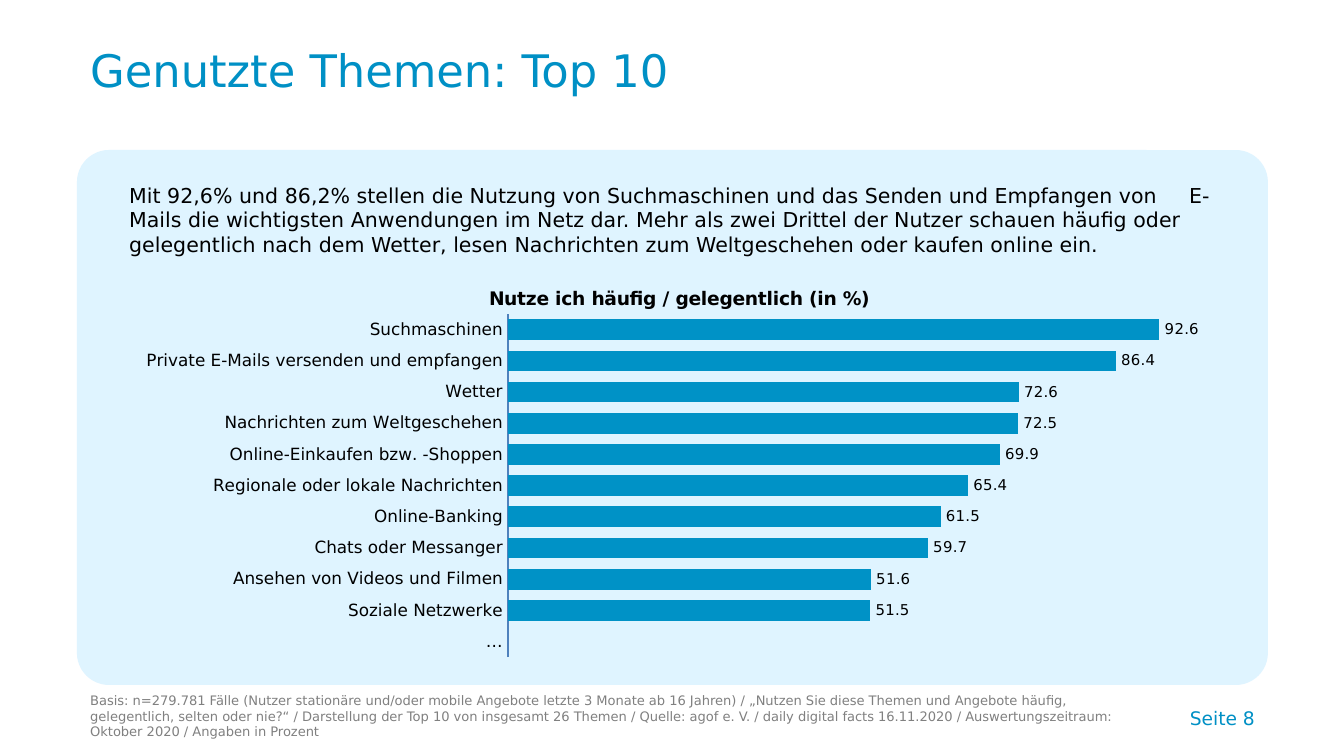
import pptx
import pptx.chart.data
import pptx.dml.color
import pptx.enum.chart
import pptx.enum.shapes
import pptx.enum.text
import pptx.oxml
import pptx.oxml.ns
import pptx.util

RGBColor = pptx.dml.color.RGBColor
Align = pptx.enum.text.PP_ALIGN
Anchor = pptx.enum.text.MSO_ANCHOR

TITLE = "Genutzte Themen: Top 10"
INTRO = (
    "Mit 92,6% und 86,2% stellen die Nutzung von Suchmaschinen und das Senden und "
    "Empfangen von\tE-Mails die wichtigsten Anwendungen im Netz dar. Mehr als zwei "
    "Drittel der Nutzer schauen häufig oder gelegentlich nach dem Wetter, lesen "
    "Nachrichten zum Weltgeschehen oder kaufen online ein."
)
SOURCE_NOTE = (
    "Basis: n=279.781 Fälle (Nutzer stationäre und/oder mobile Angebote letzte 3 Monate "
    "ab 16 Jahren) / „Nutzen Sie diese Themen und Angebote häufig, gelegentlich, selten "
    "oder nie?“ / Darstellung der Top 10 von insgesamt 26 Themen / Quelle: agof e. V. / "
    "daily digital facts 16.11.2020 / Auswertungszeitraum: Oktober 2020 / Angaben in Prozent"
)
PAGE_LABEL = "Seite 8"
CHART_TITLE = "Nutze ich häufig / gelegentlich (in %)"
TOPICS = [
    ("Suchmaschinen", 92.6),
    ("Private E-Mails versenden und empfangen", 86.4),
    ("Wetter", 72.6),
    ("Nachrichten zum Weltgeschehen", 72.5),
    ("Online-Einkaufen bzw. -Shoppen", 69.9),
    ("Regionale oder lokale Nachrichten", 65.4),
    ("Online-Banking", 61.5),
    ("Chats oder Messanger", 59.7),
    ("Ansehen von Videos und Filmen", 51.6),
    ("Soziale Netzwerke", 51.5),
    ("…", None),
]

FONT = "DejaVu Sans"
BLUE = RGBColor(0x00, 0x90, 0xC5)
BAR_BLUE = RGBColor(0x00, 0x92, 0xC6)
AXIS_BLUE = RGBColor(0x4F, 0x81, 0xBD)
PALE_BLUE = RGBColor(0xDF, 0xF4, 0xFF)
GREY = RGBColor(0x80, 0x80, 0x80)
BLACK = RGBColor(0x00, 0x00, 0x00)

PX_PER_INCH = 134.4
TITLE_LAYOUT = {"x": 0.33, "y": 0.05}
PLOT_LAYOUT = {"x": 0.35, "y": 0.13, "w": 0.63, "h": 0.87}


def px(length):
    return pptx.util.Inches(length / PX_PER_INCH)


def place(left, top, width, height):
    return px(left), px(top), px(width), px(height)


def style_font(font, size, color, bold=False):
    font.name = FONT
    font.size = pptx.util.Pt(size)
    font.bold = bold
    font.color.rgb = color


def add_text(slide, text, at, size, color, align=Align.LEFT, anchor=Anchor.TOP,
             line_spacing=None, tab_stop=None):
    box = slide.shapes.add_textbox(*place(*at))
    frame = box.text_frame
    frame.word_wrap = True
    frame.vertical_anchor = anchor
    para = frame.paragraphs[0]
    para.alignment = align
    if line_spacing:
        para.line_spacing = line_spacing
    if tab_stop:
        tabs = pptx.oxml.parse_xml(
            f'<a:tabLst {pptx.oxml.ns.nsdecls("a")}>'
            f'<a:tab pos="{px(tab_stop)}" algn="l"/></a:tabLst>')
        para._p.get_or_add_pPr().append(tabs)
    span = para.add_run()
    span.text = text
    style_font(span.font, size, color)


def manual_layout(fractions, inner=False):
    target = '<c:layoutTarget val="inner"/>' if inner else ""
    modes = "".join(f'<c:{key}Mode val="edge"/>' for key in "xy")
    values = "".join(f'<c:{key} val="{value}"/>' for key, value in fractions.items())
    return pptx.oxml.parse_xml(
        f'<c:layout {pptx.oxml.ns.nsdecls("c")}><c:manualLayout>'
        f'{target}{modes}{values}</c:manualLayout></c:layout>')


def set_layout(parent, layout, position):
    for old in parent.findall(pptx.oxml.ns.qn("c:layout")):
        parent.remove(old)
    parent.insert(position, layout)


def add_topic_chart(slide, at):
    data = pptx.chart.data.CategoryChartData(number_format="#,##0.0")
    data.categories = [topic for topic, share in TOPICS]
    data.add_series("Series 1", [share for topic, share in TOPICS])
    chart = slide.shapes.add_chart(
        pptx.enum.chart.XL_CHART_TYPE.BAR_CLUSTERED, *place(*at), data).chart
    style_font(chart.font, 10, BLACK)
    chart.has_legend = False

    chart.has_title = True
    span = chart.chart_title.text_frame.paragraphs[0].add_run()
    span.text = CHART_TITLE
    style_font(span.font, 10, BLACK, bold=True)
    set_layout(chart.chart_title._element, manual_layout(TITLE_LAYOUT), 1)
    set_layout(chart._chartSpace.chart.plotArea, manual_layout(PLOT_LAYOUT, inner=True), 0)

    topic_axis = chart.category_axis
    topic_axis.reverse_order = True
    topic_axis.major_tick_mark = pptx.enum.chart.XL_TICK_MARK.NONE
    topic_axis.format.line.color.rgb = AXIS_BLUE
    topic_axis.format.line.width = pptx.util.Pt(0.75)
    style_font(topic_axis.tick_labels.font, 9, BLACK)
    share_axis = chart.value_axis
    share_axis.minimum_scale = 0
    share_axis.maximum_scale = 100
    share_axis.has_major_gridlines = False
    share_axis.visible = False

    plot = chart.plots[0]
    plot.gap_width = 50
    plot.vary_by_categories = False
    fill = plot.series[0].format.fill
    fill.solid()
    fill.fore_color.rgb = BAR_BLUE
    labels = plot.series[0].data_labels
    labels.show_value = True
    labels.number_format = "#,##0.0"
    labels.number_format_is_linked = False
    labels.position = pptx.enum.chart.XL_LABEL_POSITION.OUTSIDE_END
    style_font(labels.font, 8, BLACK)


def add_panel(slide, at):
    panel = slide.shapes.add_shape(
        pptx.enum.shapes.MSO_SHAPE.ROUNDED_RECTANGLE, *place(*at))
    panel.adjustments[0] = 0.06
    panel.shadow.inherit = False
    panel.fill.solid()
    panel.fill.fore_color.rgb = PALE_BLUE
    panel.line.fill.background()


def main():
    deck = pptx.Presentation()
    deck.slide_width, deck.slide_height = px(1344), px(756)
    slide = deck.slides.add_slide(deck.slide_layouts[6])
    add_panel(slide, (77, 150, 1191, 535))
    add_text(slide, PAGE_LABEL, (879, 685, 389, 51), 10, BLUE,
             align=Align.RIGHT, anchor=Anchor.BOTTOM)
    add_text(slide, TITLE, (77, 37, 985, 76), 24, BLUE,
             anchor=Anchor.MIDDLE, line_spacing=0.8)
    add_text(slide, SOURCE_NOTE, (77, 693, 1063, 53), 7, GREY, anchor=Anchor.BOTTOM)
    add_topic_chart(slide, (117, 263, 1117, 395))
    add_text(slide, INTRO, (116, 176, 1117, 87), 11, BLACK, tab_stop=1060)
    deck.save("out.pptx")


if __name__ == "__main__":
    main()
